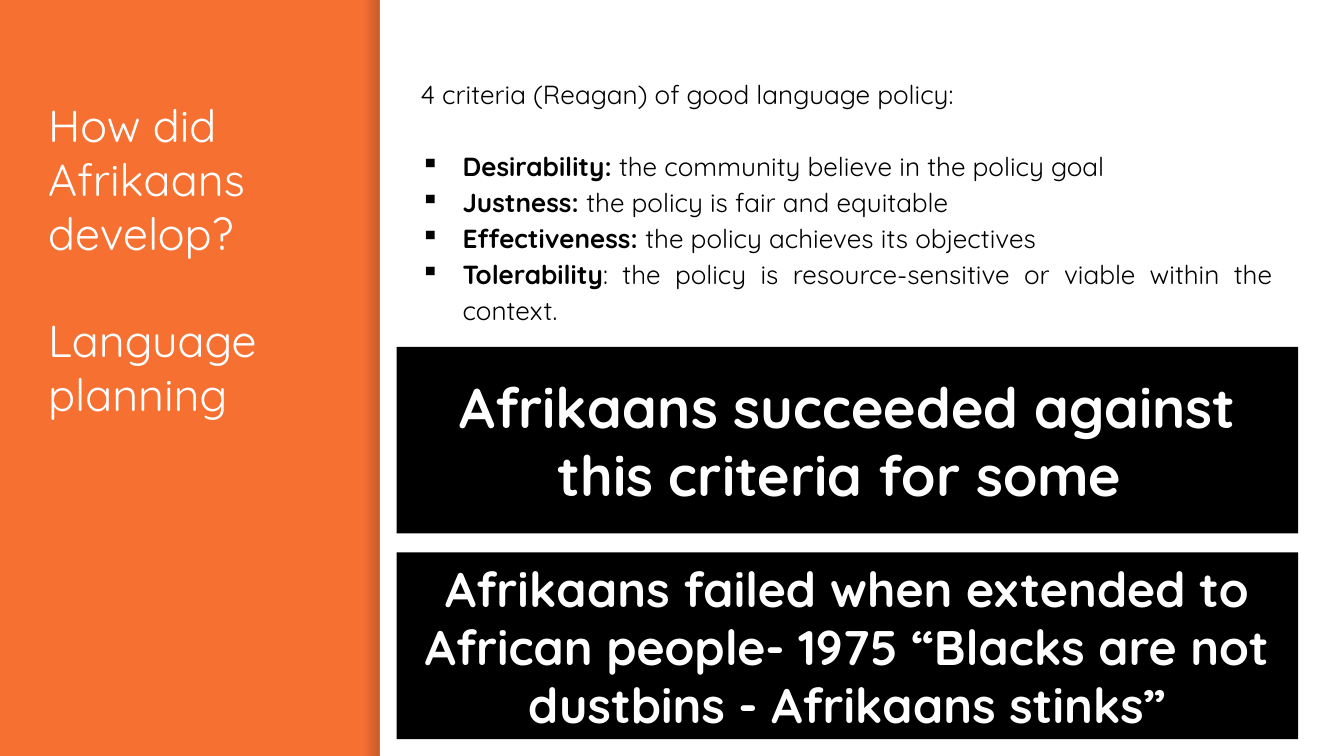
from dataclasses import dataclass

import pptx
import pptx.dml.color
import pptx.enum.shapes
import pptx.enum.text
import pptx.oxml
import pptx.oxml.ns
import pptx.util

Pt = pptx.util.Pt
RGB = pptx.dml.color.RGBColor
ALIGN = pptx.enum.text.PP_ALIGN
ANCHOR = pptx.enum.text.MSO_ANCHOR


@dataclass(frozen=True)
class Theme:
    font: str = "Quicksand"
    orange: RGB = RGB(0xF6, 0x70, 0x31)
    white: RGB = RGB(0xFF, 0xFF, 0xFF)
    black: RGB = RGB(0, 0, 0)
    shade: RGB = RGB(0, 0, 0x14)
    title: int = 24
    body: int = 14
    verdict: int = 30
    quote: int = 26


THEME = Theme()
WIDTH, HEIGHT = 720, 405
PANEL_LEFT = 203.5
SHADE_WIDTH = 9
BULLET_INDENT = 22.5

CRITERIA = [
    ("Desirability:", " the community believe in the policy goal"),
    ("Justness: ", "the policy is fair and equitable"),
    ("Effectiveness: ", "the policy achieves its objectives"),
    ("Tolerability", ": the policy is resource-sensitive or viable within the context."),
]


def add_child(parent, tag, **attrs):
    child = pptx.oxml.parse_xml(f'<{tag} {pptx.oxml.ns.nsdecls("a")}/>')
    for name, value in attrs.items():
        child.set(name, value)
    parent.append(child)


def add_rect(s, left, top, width, height, color=None):
    sp = s.shapes.add_shape(pptx.enum.shapes.MSO_SHAPE.RECTANGLE,
                            Pt(left), Pt(top), Pt(width), Pt(height))
    sp.shadow.inherit = False
    sp.line.fill.background()
    if color is not None:
        sp.fill.solid()
        sp.fill.fore_color.rgb = color
    return sp


def add_edge_shade(s):
    """Fade from clear to dark along the left side of the white panel."""
    sp = add_rect(s, PANEL_LEFT - SHADE_WIDTH, 0, SHADE_WIDTH, HEIGHT)
    sp.fill.gradient()
    sp.fill.gradient_angle = 0
    for stop, position, alpha in zip(sp.fill.gradient_stops, (0, 1), ("0", "20000")):
        stop.color.rgb = THEME.shade
        stop.position = position
    for color, alpha in zip(sp.fill._xPr.iter(pptx.oxml.ns.qn("a:srgbClr")), ("0", "20000")):
        add_child(color, "a:alpha", val=alpha)


def add_text_box(s, left, top, width, height):
    return s.shapes.add_textbox(Pt(left), Pt(top), Pt(width), Pt(height))


def set_text(sp, paragraphs, *, size, color, align=ALIGN.LEFT, anchor=ANCHOR.TOP,
             spacing=None, gap_after_first=0, bullets_from=None):
    """Fill a shape; each paragraph is a list of (text, bold) runs."""
    tf = sp.text_frame
    tf.word_wrap = True
    tf.vertical_anchor = anchor
    tf.margin_left = tf.margin_right = tf.margin_top = tf.margin_bottom = Pt(7.2)
    for i, runs in enumerate(paragraphs):
        p = tf.add_paragraph() if i else tf.paragraphs[0]
        p.alignment = align
        if spacing:
            p.line_spacing = spacing
        if i == 0 and gap_after_first:
            p.space_after = Pt(gap_after_first)
        for text, bold in runs:
            r = p.add_run()
            r.text = text
            r.font.name = THEME.font
            r.font.size = Pt(size)
            r.font.bold = bold
            r.font.color.rgb = color
        if bullets_from is not None and i >= bullets_from:
            pPr = p._p.get_or_add_pPr()
            pPr.set("marL", str(Pt(BULLET_INDENT)))
            pPr.set("indent", str(-Pt(BULLET_INDENT)))
            add_child(pPr, "a:buChar", char="▪")


def add_banner(s, top, text, size):
    sp = add_rect(s, 212.5, top, 483, 100, THEME.black)
    set_text(sp, [[(text, True)]], size=size, color=THEME.white,
             align=ALIGN.CENTER, anchor=ANCHOR.MIDDLE)


def main():
    prs = pptx.Presentation()
    prs.slide_width, prs.slide_height = Pt(WIDTH), Pt(HEIGHT)
    s = prs.slides.add_slide(prs.slide_layouts[6])
    s.background.fill.solid()
    s.background.fill.fore_color.rgb = THEME.orange

    add_edge_shade(s)
    add_rect(s, PANEL_LEFT, 0, WIDTH - PANEL_LEFT, HEIGHT, THEME.white)

    title = [[("How did Afrikaans develop?", False)], [("Language planning", False)]]
    set_text(add_text_box(s, 18.7, 45.4, 161.3, 313), title,
             size=THEME.title, color=THEME.white, gap_after_first=28.8)

    body = [[("4 criteria (Reagan) of good language policy:", False)]]
    body += [[(name, True), (meaning, False)] for name, meaning in CRITERIA]
    set_text(add_text_box(s, 218.2, 32.4, 470.9, 313), body,
             size=THEME.body, color=THEME.black, align=ALIGN.JUSTIFY,
             spacing=1.15, gap_after_first=19.3, bullets_from=1)

    add_banner(s, 185.8, "Afrikaans succeeded against this criteria for some ", THEME.verdict)
    add_banner(s, 296, "Afrikaans failed when extended to African people- 1975 "
               "“Blacks are not dustbins - Afrikaans stinks”", THEME.quote)

    prs.save("out.pptx")


if __name__ == "__main__":
    main()
